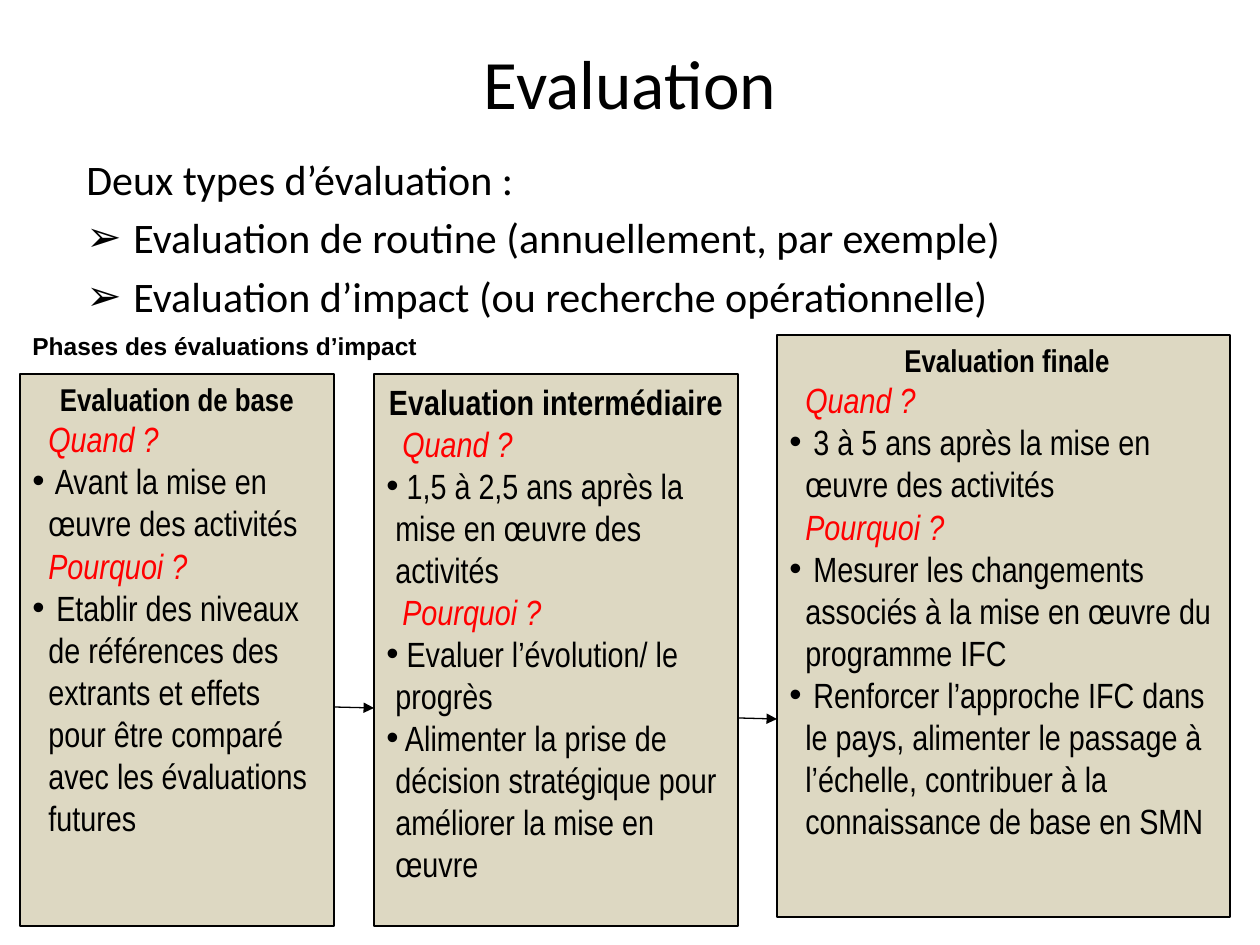
from lxml.etree import SubElement
from pptx import Presentation
from pptx.dml.color import RGBColor
from pptx.enum.shapes import MSO_CONNECTOR, MSO_SHAPE
from pptx.enum.text import MSO_ANCHOR, PP_ALIGN
from pptx.oxml.ns import qn
from pptx.util import Pt

PX = 914400 / 126
BLACK = RGBColor(0x00, 0x00, 0x00)
WHITE = RGBColor(0xFF, 0xFF, 0xFF)
RED = RGBColor(0xFF, 0x00, 0x00)
BEIGE = RGBColor(0xDD, 0xD8, 0xC2)

# Each phase: box, heading size, bullet indent, heading, when, why
PHASES = [
    ((20, 374, 314, 552), 18, 16, "Evaluation de base",
     [" Avant la mise en œuvre des activités"],
     [" Etablir des niveaux de références des extrants et effets pour être "
      "comparé avec les évaluations futures"]),
    ((374, 374, 364, 552), 20, 9, "Evaluation intermédiaire",
     [" 1,5 à 2,5 ans après la mise en œuvre des activités"],
     [" Evaluer l’évolution/ le progrès",
      " Alimenter la prise de décision stratégique pour améliorer la mise en œuvre"]),
    ((777, 335, 453, 582), 18, 16, " Evaluation finale",
     [" 3 à 5 ans après la mise en œuvre des activités"],
     [" Mesurer les changements associés à la mise en œuvre du programme IFC",
      " Renforcer l’approche IFC dans le pays, alimenter le passage à l’échelle, "
      "contribuer à la connaissance de base en SMN"]),
]
ARROWS = [(334, 707, 374, 708), (738, 718, 777, 719)]


def emu(*lengths):
    return [round(n * PX) for n in lengths]


def add_paragraph(tf, text, size, font, color=BLACK, bold=False, italic=False,
                  align=PP_ALIGN.LEFT, margin=0, bullet=None):
    p = tf.paragraphs[0]
    if p.text:
        p = tf.add_paragraph()
    p.text = text
    p.alignment = align
    r = p.runs[0]
    r.font.size, r.font.name = Pt(size), font
    r.font.bold, r.font.italic = bold, italic
    r.font.color.rgb = color
    # Hanging indent and bullet
    pPr = p._p.get_or_add_pPr()
    left = emu(margin)[0]
    pPr.set("marL", str(left))
    pPr.set("indent", str(-left if bullet else 0))
    if bullet:
        SubElement(pPr, qn("a:buFont"), typeface="Arial")
        SubElement(pPr, qn("a:buChar"), char=bullet)
    return p


def add_text_box(s, box, anchor=MSO_ANCHOR.TOP):
    tf = s.shapes.add_textbox(*emu(*box)).text_frame
    tf.word_wrap = True
    tf.vertical_anchor = anchor
    return tf


def add_process(s, box, fill, outlined):
    sp = s.shapes.add_shape(MSO_SHAPE.FLOWCHART_PROCESS, *emu(*box))
    sp.shadow.inherit = False
    sp.fill.solid()
    sp.fill.fore_color.rgb = fill
    if outlined:
        sp.line.color.rgb = BLACK
        sp.line.width = Pt(0.75)
    else:
        sp.line.fill.background()
    tf = sp.text_frame
    tf.word_wrap = True
    tf.vertical_anchor = MSO_ANCHOR.TOP
    return tf


def add_title(s, box):
    tf = add_text_box(s, box, MSO_ANCHOR.MIDDLE)
    add_paragraph(tf, "Evaluation", 39.6, "Calibri", align=PP_ALIGN.CENTER)


def add_types(s, box):
    tf = add_text_box(s, box)
    add_paragraph(tf, "Deux types d’évaluation :", 24, "Calibri")
    for text in ("Evaluation de routine (annuellement, par exemple)",
                 "Evaluation d’impact (ou recherche opérationnelle)"):
        add_paragraph(tf, text, 24, "Calibri", margin=47, bullet="➢")
    for p in tf.paragraphs:
        p.space_before = Pt(4.8)


def add_caption(s, box):
    tf = add_process(s, box, WHITE, outlined=False)
    p = add_paragraph(tf, "Phases des évaluations d’impact", 14, "Arial", bold=True)
    p.space_after = Pt(10)


def add_phase(s, box, size, indent, heading, when, why):
    tf = add_process(s, box, BEIGE, outlined=True)
    add_paragraph(tf, heading, size, "Arial Narrow", bold=True, align=PP_ALIGN.CENTER)
    for question, answers in (("Quand ?", when), ("Pourquoi ?", why)):
        add_paragraph(tf, question, 20, "Arial Narrow", RED, italic=True, margin=16)
        for text in answers:
            add_paragraph(tf, text, 20, "Arial Narrow", margin=indent, bullet="•")


def add_arrow(s, ends):
    cxn = s.shapes.add_connector(MSO_CONNECTOR.STRAIGHT, *emu(*ends))
    cxn.line.color.rgb = BLACK
    cxn.line.width = Pt(0.75)
    SubElement(cxn.line._get_or_add_ln(), qn("a:tailEnd"), type="triangle")
    SubElement(cxn._element.spPr, qn("a:effectLst"))


def main():
    prs = Presentation()
    prs.slide_width, prs.slide_height = emu(1260, 945)
    s = prs.slides.add_slide(prs.slide_layouts[6])
    add_title(s, (63, 38, 1134, 87))
    add_types(s, (74, 147, 1091, 158))
    add_caption(s, (20, 325, 704, 39))
    for phase in PHASES:
        add_phase(s, *phase)
    for ends in ARROWS:
        add_arrow(s, ends)
    prs.save("out.pptx")


if __name__ == "__main__":
    main()
